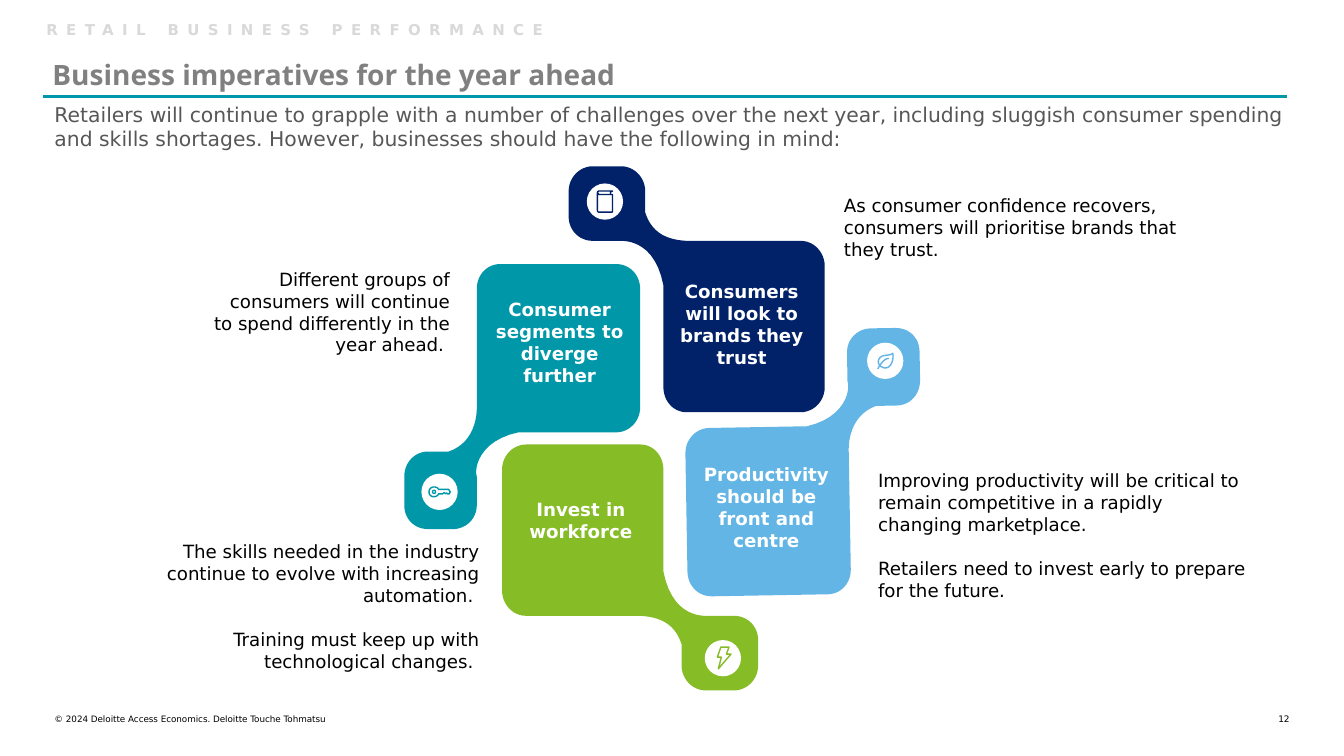
"""Build the slide on business imperatives for retailers."""
from math import cos, radians, sin

from lxml import etree
from pptx import Presentation
from pptx.dml.color import RGBColor
from pptx.enum.shapes import MSO_SHAPE
from pptx.enum.text import PP_ALIGN
from pptx.oxml.ns import qn
from pptx.util import Emu, Inches, Pt

OVAL = MSO_SHAPE.OVAL
LEFT, MID, RIGHT = PP_ALIGN.LEFT, PP_ALIGN.CENTER, PP_ALIGN.RIGHT
WIDE, HIGH = 13.33, 7.5
COLORS = {"teal": "0097A9", "green": "86BC25", "navy": "012169", "sky": "62B5E5",
          "white": "FFFFFF", "black": "000000", "grey": "808080", "dark": "575757",
          "pale": "D9D9D9"}

TITLE = "Business imperatives for the year ahead"
TAG = "RETAIL BUSINESS PERFORMANCE"
LEAD = ("Retailers will continue to grapple with a number of challenges over the next year, "
        "including sluggish consumer spending and skills shortages. However, businesses "
        "should have the following in mind:")
RIGHTS = "© 2024 Deloitte Access Economics. Deloitte Touche Tohmatsu"
PAGE = "12"

TALL = [(-0.45, 1.07), (-0.45, 0.79), (-0.48, 0.7, -0.42, 0.43, -0.04, 0.35), (0.93, 0.35),
        (1.06, 0.35, 1.17, 0.24, 1.17, 0.1), (1.17, -1.07),
        (1.17, -1.21, 1.07, -1.32, 0.93, -1.32), (-0.22, -1.32),
        (-0.35, -1.32, -0.45, -1.21, -0.45, -1.08), (-0.45, 0.1),
        (-0.45, 0.27, -0.52, 0.47, -0.73, 0.54), (-0.93, 0.54),
        (-1.07, 0.54, -1.17, 0.65, -1.17, 0.79), (-1.17, 1.07),
        (-1.17, 1.21, -1.07, 1.31, -0.93, 1.31), (-0.69, 1.31),
        (-0.56, 1.31, -0.45, 1.21, -0.45, 1.07)]
FLAT = [(-1.03, -0.48), (-0.75, -0.48), (-0.66, -0.48, -0.41, -0.45, -0.33, -0.04),
        (-0.33, 0.97), (-0.33, 1.11, -0.23, 1.22, -0.1, 1.22), (1.03, 1.22),
        (1.16, 1.22, 1.27, 1.11, 1.27, 0.97), (1.27, -0.23),
        (1.27, -0.36, 1.17, -0.48, 1.03, -0.48), (-0.1, -0.48),
        (-0.27, -0.49, -0.44, -0.54, -0.51, -0.76), (-0.51, -0.97),
        (-0.51, -1.11, -0.62, -1.22, -0.75, -1.22), (-1.03, -1.22),
        (-1.16, -1.22, -1.27, -1.11, -1.27, -0.97), (-1.27, -0.72),
        (-1.27, -0.59, -1.17, -0.48, -1.03, -0.48)]

KEY = [[(-1, -2.5), (9, -2.5), (10.5, 0), (9.5, 2), (8, 2), (7, 1), (6, 2), (5, 1), (4, 1),
        (3, 2), (-1, 2), (-2.5, 6, -10.5, 6, -10.5, 0), (-10.5, -6, -2.5, -6, -1, -2.5)],
       [(-7, 0), (-7, -2, -4, -2, -4, 0), (-4, 2, -7, 2, -7, 0)]]
JAR = [[(-7.5, -9), (-7.5, 8), (-7.5, 9.5, -7, 10.5, -6, 10.5), (7, 10.5), (7.5, 10),
        (7.5, -7), (-6, -7), (-8, -7.5, -8, -10, -6, -10.5), (7.5, -10.5), (5.5, -9.5),
        (5.5, -7), (-6, -7), (-7.5, -9)]]
LEAF = [[(-5, 5), (-9, 1, -6, -4, -2, -5), (1, -6, 4, -5, 7.5, -7.5),
         (9, 0, 4, 12, -5, 5)],
        [(-7.5, 8), (-5, 4), (-2, 0, 0, -2, 3.5, -2.5)]]
BOLT = [[(-2, -11), (6, -11), (3.5, -4), (8, -4), (-4.5, 10.5), (-1.5, -1), (-5.5, -1),
         (-2, -11)]]

PETALS = [("teal", TALL, (5.18, 3.94), 0, (4.36, 4.88), KEY),
          ("green", FLAT, (6.25, 5.63), 180, (7.17, 6.53), BOLT),
          ("navy", FLAT, (6.91, 2.87), 0, (6, 2), JAR),
          ("sky", TALL, (7.97, 4.58), 179, (8.78, 3.58), LEAF)]
NAMES = [("Consumer segments to diverge further", (4.82, 2.96, 1.46, 0.88)),
         ("Consumers will look to brands they trust", (6.66, 2.78, 1.39, 0.88)),
         ("Invest in workforce", (5.13, 4.94, 1.26, 0.44)),
         ("Productivity should be front and centre", (6.83, 4.6, 1.54, 0.88))]
NOTES = [(("As consumer confidence recovers, consumers will prioritise brands that they trust.",),
          (8.37, 1.93, 3.42, 0.88), LEFT),
         (("Improving productivity will be critical to remain competitive in a rapidly "
           "changing marketplace.",
           "Retailers need to invest early to prepare for the future."),
          (8.71, 4.66, 3.64, 1.31), LEFT),
         (("Different groups of consumers will continue to spend differently in the "
           "year ahead. ",), (2.11, 2.66, 2.35, 1.09), RIGHT),
         (("The skills needed in the industry continue to evolve with increasing "
           "automation. ", "Training must keep up with technological changes. "),
          (1.27, 5.36, 3.48, 1.31), RIGHT)]

deck = Presentation()
deck.slide_width, deck.slide_height = Inches(WIDE), Inches(HIGH)
slide = deck.slides.add_slide(deck.slide_layouts[6])
shapes = slide.shapes


def tint(name):
    return RGBColor.from_string(COLORS[name])


def write(*text, box=None, frame=None, size=13, color="black", bold=False, align=LEFT,
          font="DejaVu Sans", gap=0, lines=None, track=None):
    if frame is None:
        frame = shapes.add_textbox(*map(Inches, box)).text_frame
        frame.margin_left = frame.margin_right = frame.margin_top = frame.margin_bottom = 0
    frame.word_wrap = True
    for i, words in enumerate(text):
        para = frame.add_paragraph() if i else frame.paragraphs[0]
        para.alignment = align
        if i:
            para.space_before = Pt(gap)
        if lines:
            para.line_spacing = lines
        run = para.add_run()
        run.text = words
        face = run.font
        face.name, face.size, face.bold = font, Pt(size), bold
        face.color.rgb = tint(color)
        if track:
            face._element.set("spc", str(track * 100))


def trace(steps, count=12):
    dots = [steps[0]]
    for step in steps[1:]:
        if len(step) == 2:
            dots.append(step)
            continue
        x, y = dots[-1]
        a, b, c, d, e, f = step
        for k in range(1, count + 1):
            t = k / count
            u = 1 - t
            p, q, r, s = u ** 3, 3 * u * u * t, 3 * u * t * t, t ** 3
            dots.append((p * x + q * a + r * c + s * e, p * y + q * b + r * d + s * f))
    return dots


def draw(loops, mid, unit=1, turn=0):
    c, s = cos(radians(turn)), sin(radians(turn))
    build = None
    for loop in loops:
        dots = [(Inches(mid[0] + unit * (x * c - y * s)),
                 Inches(mid[1] + unit * (x * s + y * c))) for x, y in trace(loop)]
        if build is None:
            build = shapes.build_freeform(*dots[0], scale=1.0)
        else:
            build.move_to(*dots[0])
        build.add_line_segments(dots[1:], close=loop[0] == loop[-1][-2:])
    shape = build.convert_to_shape()
    shape.shadow.inherit = False
    return shape


def paint(shape, color):
    shape.shadow.inherit = False
    shape.fill.solid()
    shape.fill.fore_color.rgb = tint(color)
    shape.line.fill.background()


def edge(cell, side, color, width):
    line = etree.SubElement(cell._tc.get_or_add_tcPr(), qn("a:" + side), w=str(Pt(width)))
    fill = etree.SubElement(line, qn("a:solidFill"))
    etree.SubElement(fill, qn("a:srgbClr"), val=COLORS[color])


write(PAGE, box=(12.45, 7.08, 0.34, 0.11), size=6.4, align=RIGHT)
write(RIGHTS, box=(0.54, 7.08, 6, 0.11), size=6.3)
write(LEAD, box=(0.54, 1.01, 12.25, 0.68), size=14.5, color="dark")

for color, form, mid, turn, spot, icon in PETALS:
    paint(draw([form], mid, turn=turn), color)
    disc = shapes.add_shape(OVAL, *(Inches(v - 0.18) for v in spot), Inches(0.36), Inches(0.36))
    paint(disc, "white")
    glyph = draw(icon, spot, unit=0.01)
    glyph.fill.background()
    glyph.line.color.rgb = tint(color)
    glyph.line.width = Pt(1)

for words, box in NAMES:
    write(words, box=box, color="white", bold=True, align=MID)
for words, box, align in NOTES:
    write(*words, box=box, align=align, gap=15.8)

table = shapes.add_table(1, 1, *map(Inches, (0.42, 0.53, 12.35, 0.43))).table
table.first_row = table.horz_banding = False
head = table.cell(0, 0)
head.margin_top = head.margin_bottom = Inches(0.02)
for side in ("lnL", "lnR", "lnT"):
    edge(head, side, "white", 1)
edge(head, "lnB", "teal", 2.25)
head.fill.background()
write(TITLE, frame=head.text_frame, size=20, color="grey", bold=True, font="Open Sans")
write(TAG, box=(0.46, 0.17, 12.4, 0.38), size=10.7, color="pale", bold=True, lines=1.2, track=6)

deck.save("out.pptx")
